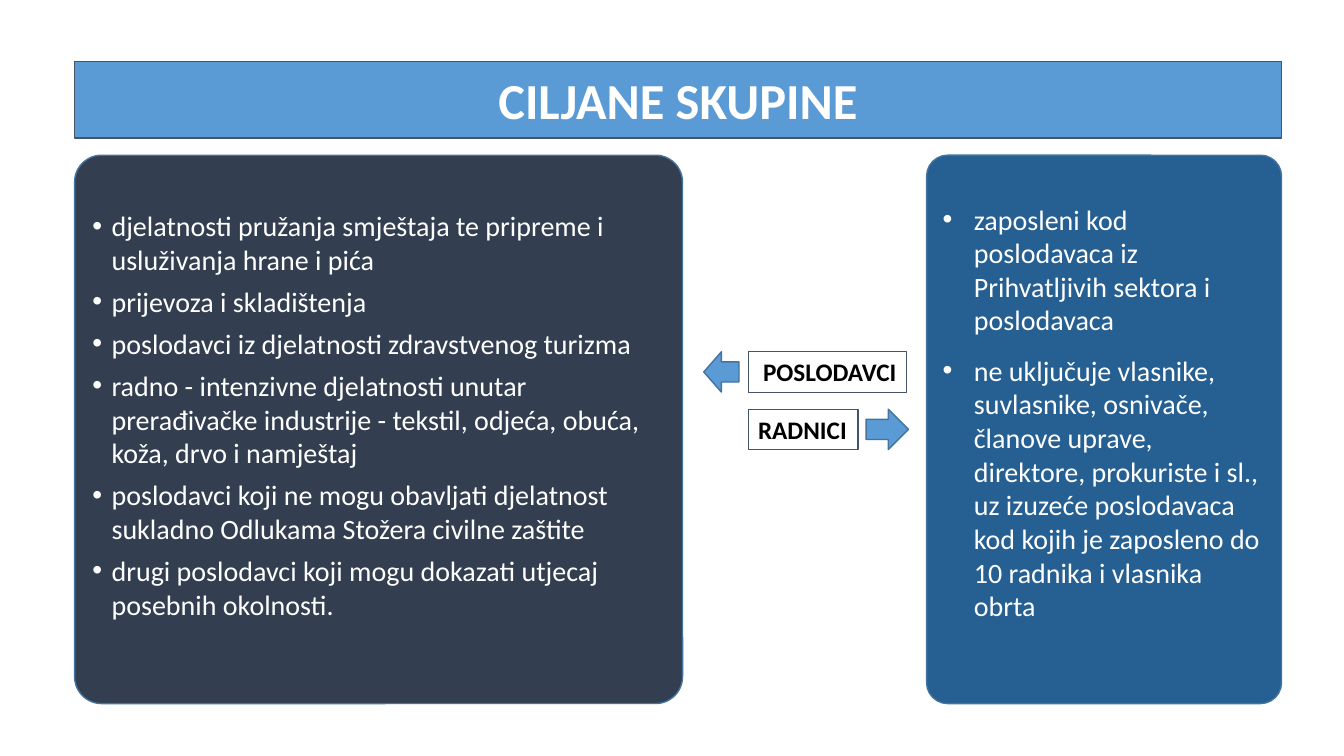
from dataclasses import dataclass

from lxml.etree import SubElement
from pptx import Presentation
from pptx.dml.color import RGBColor
from pptx.enum.shapes import MSO_SHAPE as Preset
from pptx.enum.text import MSO_ANCHOR as Anchor, MSO_AUTO_SIZE as AutoSize, PP_ALIGN as Align
from pptx.oxml.ns import qn
from pptx.shapes.autoshape import Shape
from pptx.slide import Slide
from pptx.text.text import _Paragraph as Paragraph
from pptx.util import Inches, Pt

FONT = "Calibri"
COLORS = {
    "sky": "5B9BD5",
    "slate": "333F50",
    "ocean": "265F92",
    "edge": "43739E",
    "frame": "44546A",
    "white": "FFFFFF",
    "black": "000000",
}
LEFT, RIGHT = 0.74, 12.71
PANEL_TOP, PANEL_HEIGHT = 1.54, 5.44
ROW_HEIGHT = 0.4
EMPLOYERS_TOP, WORKERS_TOP = 3.49, 4.06


@dataclass
class Box:
    left: float
    top: float
    width: float
    height: float


@dataclass
class Panel:
    box: Box
    fill: str
    corner: float
    indent: float
    space_after: int
    bottom_inset: float
    items: list[str]


@dataclass
class Label:
    box: Box
    text: str
    align: Align


@dataclass
class Arrow:
    box: Box
    rotation: int


PANELS = [
    Panel(Box(LEFT, PANEL_TOP, 6.03, PANEL_HEIGHT), "slate", 0.049, 0.19, 6, 0.34, [
        "djelatnosti pružanja smještaja te pripreme i usluživanja hrane i pića",
        "prijevoza i skladištenja",
        "poslodavci iz djelatnosti zdravstvenog turizma",
        "radno - intenzivne djelatnosti unutar prerađivačke industrije - "
        "tekstil, odjeća, obuća, koža, drvo i namještaj",
        "poslodavci koji ne mogu obavljati djelatnost sukladno Odlukama "
        "Stožera civilne zaštite",
        "drugi poslodavci koji mogu dokazati utjecaj posebnih okolnosti.",
    ]),
    Panel(Box(9.19, PANEL_TOP, 3.52, PANEL_HEIGHT), "ocean", 0.059, 0.31, 12, 0.39, [
        "zaposleni kod poslodavaca iz Prihvatljivih sektora i poslodavaca",
        "ne uključuje vlasnike, suvlasnike, osnivače, članove uprave, direktore, "
        "prokuriste i sl., uz izuzeće poslodavaca kod kojih je zaposleno do "
        "10 radnika i vlasnika obrta",
    ]),
]
LABELS = [
    Label(Box(7.42, EMPLOYERS_TOP, 1.57, ROW_HEIGHT), "POSLODAVCI", Align.RIGHT),
    Label(Box(7.42, WORKERS_TOP, 1.09, ROW_HEIGHT), "RADNICI", Align.LEFT),
]
ARROWS = [
    Arrow(Box(6.98, EMPLOYERS_TOP, 0.35, ROW_HEIGHT), 0),
    Arrow(Box(8.59, WORKERS_TOP, 0.42, ROW_HEIGHT), 180),
]


def rgb(color: str) -> RGBColor:
    return RGBColor.from_string(COLORS[color])


def add_block(slide: Slide, preset: Preset, box: Box, fill: str | None,
              line: str, line_width: float = 1) -> Shape:
    block = slide.shapes.add_shape(preset, Inches(box.left), Inches(box.top),
                                   Inches(box.width), Inches(box.height))
    block.shadow.inherit = False
    if fill:
        block.fill.solid()
        block.fill.fore_color.rgb = rgb(fill)
    else:
        block.fill.background()
    block.line.color.rgb = rgb(line)
    block.line.width = Pt(line_width)
    block.text_frame.word_wrap = True
    return block


def style_text(paragraph: Paragraph, size: int, color: str, align: Align,
               bold: bool = False) -> None:
    paragraph.alignment = align
    for run in paragraph.runs:
        run.font.name = FONT
        run.font.size = Pt(size)
        run.font.bold = bold
        run.font.color.rgb = rgb(color)


def add_bullet(paragraph: Paragraph, indent: float) -> None:
    properties = paragraph._p.get_or_add_pPr()
    properties.set("marL", str(Inches(indent)))
    properties.set("indent", str(-Inches(indent)))
    SubElement(properties, qn("a:buFont"), typeface="Arial")
    SubElement(properties, qn("a:buChar"), char="•")


def add_title(slide: Slide) -> None:
    title = add_block(slide, Preset.RECTANGLE, Box(LEFT, 0.61, RIGHT - LEFT, 0.76),
                      "sky", "frame")
    title.text_frame.text = "CILJANE SKUPINE"
    title.text_frame.vertical_anchor = Anchor.MIDDLE
    style_text(title.text_frame.paragraphs[0], 36, "white", Align.CENTER, bold=True)


def add_panel(slide: Slide, panel: Panel) -> None:
    block = add_block(slide, Preset.ROUNDED_RECTANGLE, panel.box, panel.fill, "edge")
    block.adjustments[0] = panel.corner
    frame = block.text_frame
    frame.vertical_anchor = Anchor.MIDDLE
    frame.margin_bottom = Inches(panel.bottom_inset)
    frame.text = "\n".join(panel.items)
    for paragraph in frame.paragraphs:
        style_text(paragraph, 20, "white", Align.LEFT)
        paragraph.space_after = Pt(panel.space_after)
        add_bullet(paragraph, panel.indent)


def add_label(slide: Slide, label: Label) -> None:
    block = add_block(slide, Preset.RECTANGLE, label.box, None, "frame", 0.75)
    frame = block.text_frame
    frame.text = label.text
    frame.vertical_anchor = Anchor.TOP
    frame.auto_size = AutoSize.SHAPE_TO_FIT_TEXT
    style_text(frame.paragraphs[0], 18, "black", label.align, bold=True)


def add_arrow(slide: Slide, arrow: Arrow) -> None:
    block = add_block(slide, Preset.LEFT_ARROW, arrow.box, "sky", "edge")
    block.rotation = arrow.rotation


def main() -> None:
    deck = Presentation()
    deck.slide_width, deck.slide_height = Inches(13.33), Inches(7.5)
    slide = deck.slides.add_slide(deck.slide_layouts[6])

    # Heading and the two target groups
    add_title(slide)
    for panel in PANELS:
        add_panel(slide, panel)

    # Group names with arrows to their panels
    for label in LABELS:
        add_label(slide, label)
    for arrow in ARROWS:
        add_arrow(slide, arrow)

    deck.save("out.pptx")


if __name__ == "__main__":
    main()
